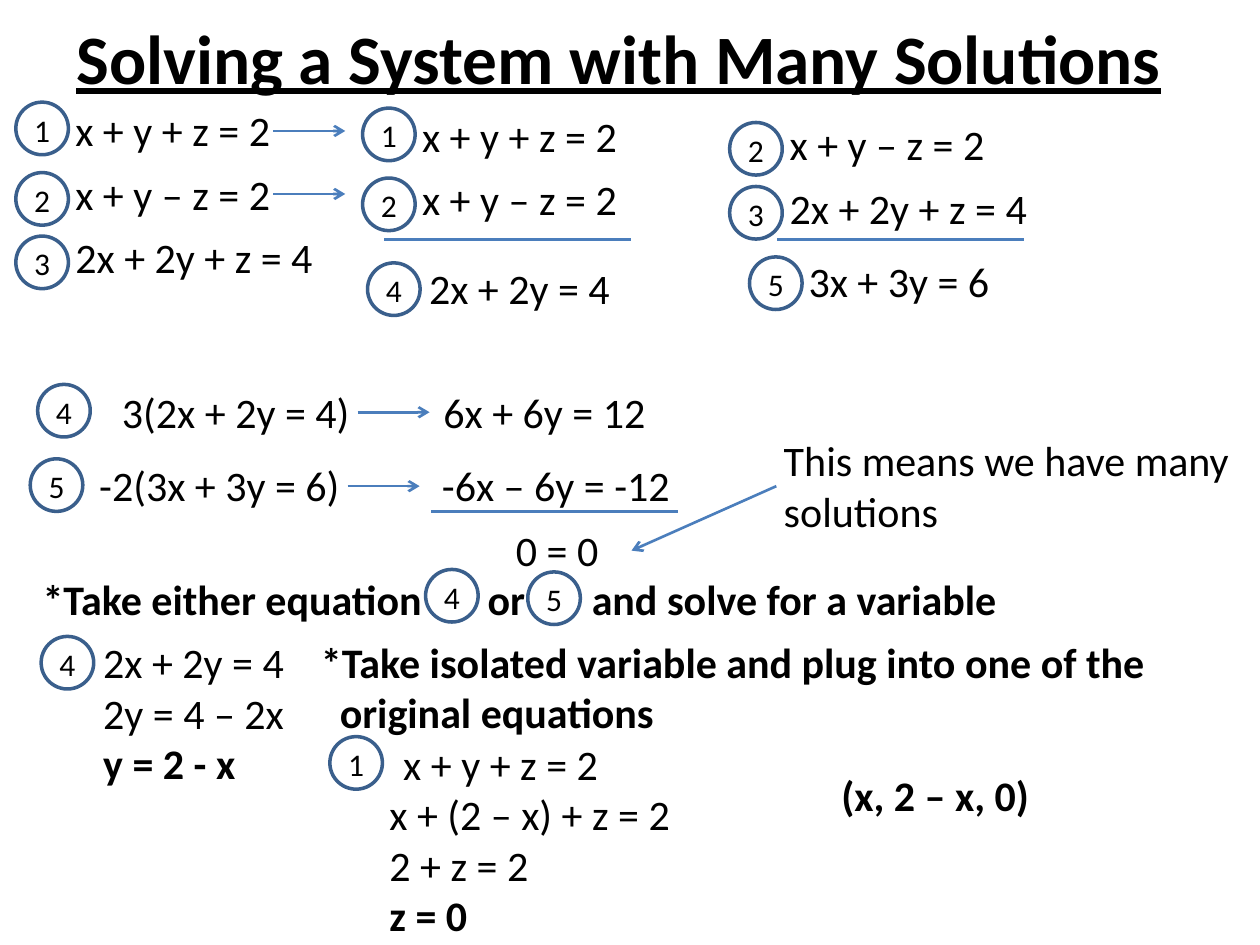
from pptx import Presentation
from pptx.dml.color import RGBColor
from pptx.enum.shapes import MSO_CONNECTOR, MSO_SHAPE
from pptx.enum.text import MSO_ANCHOR, PP_ALIGN
from pptx.oxml.ns import qn
from pptx.util import Cm, Pt
from lxml.etree import SubElement

THEME = {
    "ink": RGBColor(0, 0, 0),
    "ring": RGBColor(0x3A, 0x5F, 0x8C),
    "stroke": RGBColor(0x4B, 0x7E, 0xBC),
    "ring_width": Pt(2),
    "stroke_width": Pt(1.5),
    "title": {"name": "Calibri", "size": Pt(39.6), "bold": True, "underline": True},
    "body": {"name": "Calibri", "size": Pt(24)},
    "strong": {"name": "Calibri", "size": Pt(24), "bold": True},
    "label": {"name": "Calibri", "size": Pt(18)},
}

# All lengths below are in centimetres.
TITLE = "Solving a System with Many Solutions"
SUM, DIFF, LONG = "x + y + z = 2", "x + y – z = 2", "2x + 2y + z = 4"
SHORT = "2x + 2y = 4"

# left, top, width, lines; a line is (text, style, indent)
TEXTS = [
    (1.27, 1.98, 4.47, [(SUM, "body", 0)]),
    (1.27, 3.28, 4.47, [(DIFF, "body", 0)]),
    (1.27, 4.55, 5.33, [(LONG, "body", 0)]),
    (8.26, 2.11, 4.47, [(SUM, "body", 0)]),
    (8.26, 3.38, 4.47, [(DIFF, "body", 0)]),
    (8.4, 5.17, 4.19, [(SHORT, "body", 0)]),
    (15.67, 2.26, 4.47, [(DIFF, "body", 0)]),
    (15.67, 3.56, 5.33, [(LONG, "body", 0)]),
    (16.05, 5.03, 4.19, [("3x + 3y = 6", "body", 0)]),
    (2.21, 7.67, 5.28, [(f"3({SHORT})", "body", 0)]),
    (1.75, 9.14, 5.56, [("-2(3x + 3y = 6)", "body", 0)]),
    (8.69, 7.67, 4.62, [("6x + 6y = 12", "body", 0)]),
    (8.66, 9.14, 5.16, [("-6x – 6y = -12", "body", 0)]),
    (10.15, 10.45, 2.18, [("0 = 0", "body", 0)]),
    (15.55, 8.64, 9.58, [("This means we have many", "body", 0),
                         ("solutions", "body", 0)]),
    (0.61, 11.43, 19.94, [("*Take either equation\tor\tand solve for a variable", "strong", 0)]),
    (1.83, 12.71, 4.19, [(SHORT, "body", 0),
                         ("2y = 4 – 2x", "body", 0),
                         ("y = 2 - x", "strong", 0)]),
    (6.22, 12.7, 17.3, [("*Take isolated variable and plug into one of the", "strong", 0),
                        ("original equations", "strong", 0.38)]),
    (7.6, 14.76, 6.22, [(SUM, "body", 0.28),
                        ("x + (2 – x) + z = 2", "body", 0),
                        ("2 + z = 2", "body", 0),
                        ("z = 0", "strong", 0)]),
    (16.71, 15.39, 4.34, [("(x, 2 – x, 0)", "strong", 0)]),
]
TAB_STOPS = [8.97, 11.07]

# equation number, left, top
MARKERS = [
    (1, 0.32, 2.06), (2, 0.32, 3.48), (3, 0.32, 4.76),
    (1, 7.31, 2.18), (2, 7.31, 3.59), (4, 7.41, 5.3),
    (2, 14.71, 2.47), (3, 14.71, 3.76), (5, 15.11, 5.18),
    (4, 0.76, 7.75), (5, 0.61, 9.25),
    (4, 8.58, 11.48), (5, 10.64, 11.53),
    (4, 0.83, 12.83), (1, 6.65, 14.85),
]
MARKER_SIZE = 1.06

STEP_ARROWS = [(5.51, 2.64), (5.51, 3.91), (7.21, 8.31), (7.01, 9.8)]
SUM_RULES = [(7.75, 4.83), (15.67, 4.83), (8.69, 10.31)]
ARROW_LENGTH, RULE_LENGTH = 1.45, 4.97
NOTE_ARROW = (15.65, 9.8, 12.73, 11.1)
LINE_HEIGHT, PADDING = 1.02, 0.25


def add_run(p, text, style):
    r = p.add_run()
    r.text = text
    for key, value in THEME[style].items():
        setattr(r.font, key, value)
    r.font.color.rgb = THEME["ink"]


def add_tab_stops(p):
    tabs = SubElement(p._p.get_or_add_pPr(), qn("a:tabLst"))
    for stop in TAB_STOPS:
        SubElement(tabs, qn("a:tab"), pos=str(Cm(stop)), algn="l")


def add_text(shapes, x, y, w, lines):
    h = PADDING + LINE_HEIGHT * len(lines)
    tf = shapes.add_textbox(Cm(x), Cm(y), Cm(w), Cm(h)).text_frame
    tf.word_wrap = False
    for i, (text, style, indent) in enumerate(lines):
        p = tf.add_paragraph() if i else tf.paragraphs[0]
        if indent:
            p._p.get_or_add_pPr().set("marL", str(Cm(indent)))
        if "\t" in text:
            add_tab_stops(p)
        add_run(p, text, style)


def add_title(shapes):
    tf = shapes.add_textbox(Cm(1.05), Cm(-0.45), Cm(22.86), Cm(3.18)).text_frame
    tf.word_wrap = True
    tf.vertical_anchor = MSO_ANCHOR.MIDDLE
    p = tf.paragraphs[0]
    p.alignment = PP_ALIGN.CENTER
    add_run(p, TITLE, "title")


def add_marker(shapes, number, x, y):
    """Circled equation number."""
    sp = shapes.add_shape(MSO_SHAPE.OVAL, Cm(x), Cm(y), Cm(MARKER_SIZE), Cm(MARKER_SIZE))
    sp.shadow.inherit = False
    sp.fill.background()
    sp.line.color.rgb = THEME["ring"]
    sp.line.width = THEME["ring_width"]
    tf = sp.text_frame
    layout = {"word_wrap": False, "vertical_anchor": MSO_ANCHOR.MIDDLE,
              "margin_left": 0, "margin_right": 0, "margin_top": Cm(0.04), "margin_bottom": 0}
    for key, value in layout.items():
        setattr(tf, key, value)
    p = tf.paragraphs[0]
    p.alignment = PP_ALIGN.CENTER
    add_run(p, str(number), "label")


def add_line(shapes, x1, y1, x2, y2, arrow=False):
    line = shapes.add_connector(MSO_CONNECTOR.STRAIGHT, Cm(x1), Cm(y1), Cm(x2), Cm(y2))
    line.line.color.rgb = THEME["stroke"]
    line.line.width = THEME["stroke_width"]
    if arrow:
        SubElement(line.line._get_or_add_ln(), qn("a:tailEnd"), type="arrow")
    SubElement(line._element.spPr, qn("a:effectLst"))


def main():
    prs = Presentation()
    prs.slide_width, prs.slide_height = Cm(25.4), Cm(19.05)
    shapes = prs.slides.add_slide(prs.slide_layouts[6]).shapes
    add_title(shapes)
    for text in TEXTS:
        add_text(shapes, *text)
    for marker in MARKERS:
        add_marker(shapes, *marker)
    for x, y in STEP_ARROWS:
        add_line(shapes, x, y, x + ARROW_LENGTH, y, arrow=True)
    for x, y in SUM_RULES:
        add_line(shapes, x, y, x + RULE_LENGTH, y)
    add_line(shapes, *NOTE_ARROW, arrow=True)
    prs.save("out.pptx")


if __name__ == "__main__":
    main()
